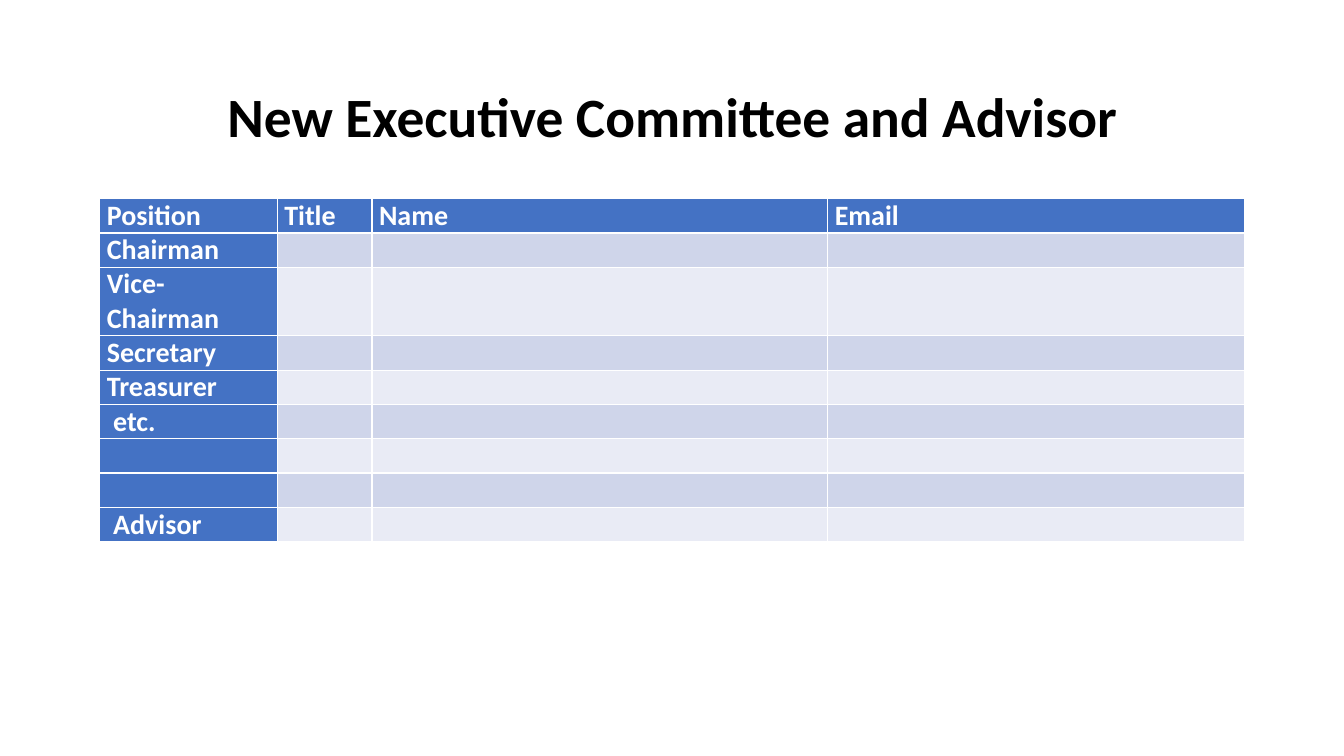
from pptx import Presentation
from pptx.dml.color import RGBColor
from pptx.enum import text
from pptx.util import Inches, Pt

# Content
TITLE = "New Executive Committee and Advisor"
HEADINGS = ["Position", "Title", "Name", "Email"]
POSITIONS = ["Chairman", "Vice-Chairman", "Secretary", "Treasurer",
             " etc.", "", "", " Advisor"]

# Layout
COLUMN_WIDTHS = [1.76, 0.94, 4.52, 4.13]
LINE_HEIGHT = 0.34
TWO_LINE_ROW = 1 + POSITIONS.index("Vice-Chairman")

# Style
FONT = "Calibri"
BLACK = RGBColor(0x00, 0x00, 0x00)
WHITE = RGBColor(0xFF, 0xFF, 0xFF)
BLUE = RGBColor(0x44, 0x72, 0xC4)
BANDS = [RGBColor(0xE9, 0xEB, 0xF5), RGBColor(0xCF, 0xD5, 0xEA)]


def set_font(para, size, color):
    para.font.name = FONT
    para.font.size = Pt(size)
    para.font.bold = True
    para.font.color.rgb = color


deck = Presentation()
deck.slide_width, deck.slide_height = Inches(13.33), Inches(7.5)
page = deck.slides.add_slide(deck.slide_layouts[5])

# Title
title = page.shapes.title
title.left, title.top = Inches(1.67), Inches(0.5)
title.width, title.height = Inches(10), Inches(1.03)
frame = title.text_frame
frame.text = TITLE
frame.word_wrap = True
frame.auto_size = text.MSO_AUTO_SIZE.NONE
frame.vertical_anchor = text.MSO_ANCHOR.BOTTOM
heading = frame.paragraphs[0]
heading.alignment = text.PP_ALIGN.CENTER
heading.line_spacing = 0.9
set_font(heading, 39.6, BLACK)

# Committee table: the default table style supplies the white rules
rows = [HEADINGS] + [[position, "", "", ""] for position in POSITIONS]
table = page.shapes.add_table(
    len(rows), len(HEADINGS), Inches(0.99), Inches(1.97),
    Inches(sum(COLUMN_WIDTHS)), Inches(LINE_HEIGHT * (len(rows) + 1))).table
table.first_col = True
for column, width in zip(table.columns, COLUMN_WIDTHS):
    column.width = Inches(width)

for r, values in enumerate(rows):
    table.rows[r].height = Inches(LINE_HEIGHT * (2 if r == TWO_LINE_ROW else 1))
    for c, value in enumerate(values):
        cell = table.cell(r, c)
        cell.margin_left = cell.margin_right = Inches(0.07)
        cell.margin_top = cell.margin_bottom = 0
        cell.fill.solid()
        cell.fill.fore_color.rgb = BLUE if r == 0 or c == 0 else BANDS[r % 2]
        if value:
            cell.text = value
            set_font(cell.text_frame.paragraphs[0], 20, WHITE)

deck.save("out.pptx")
